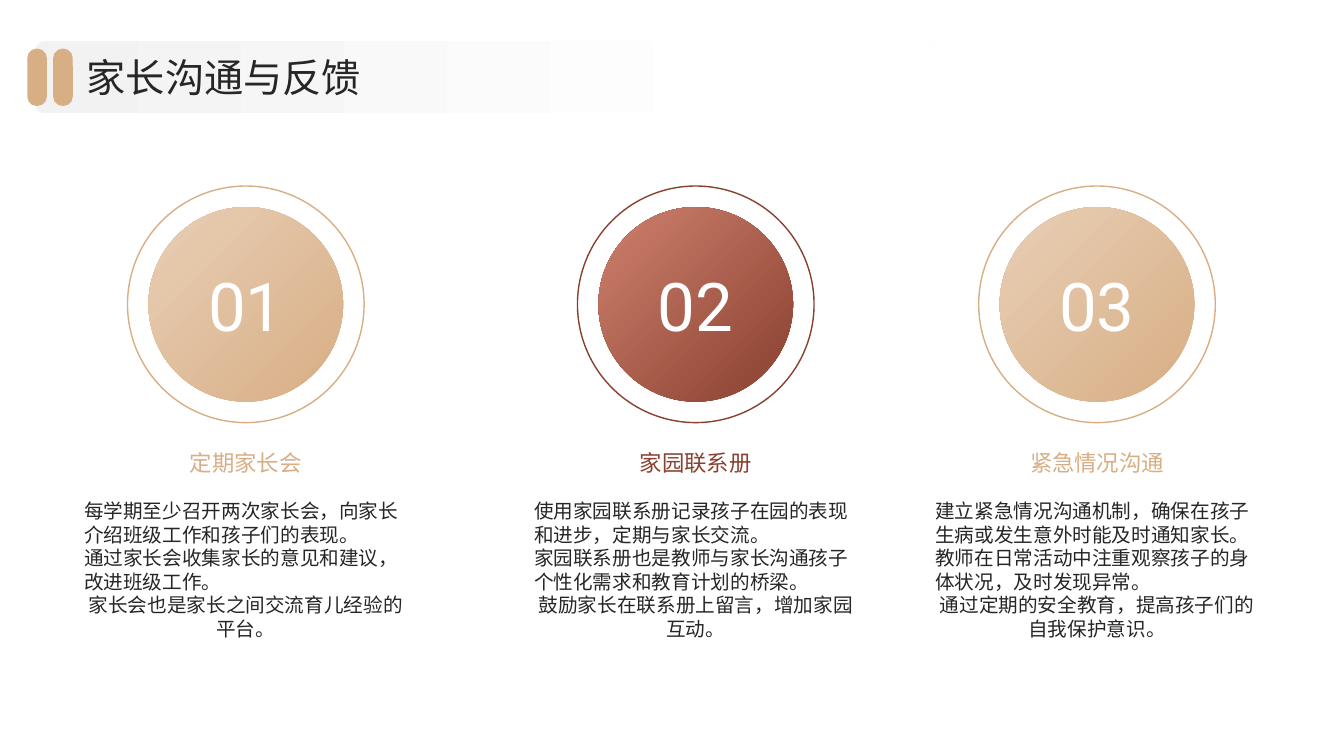
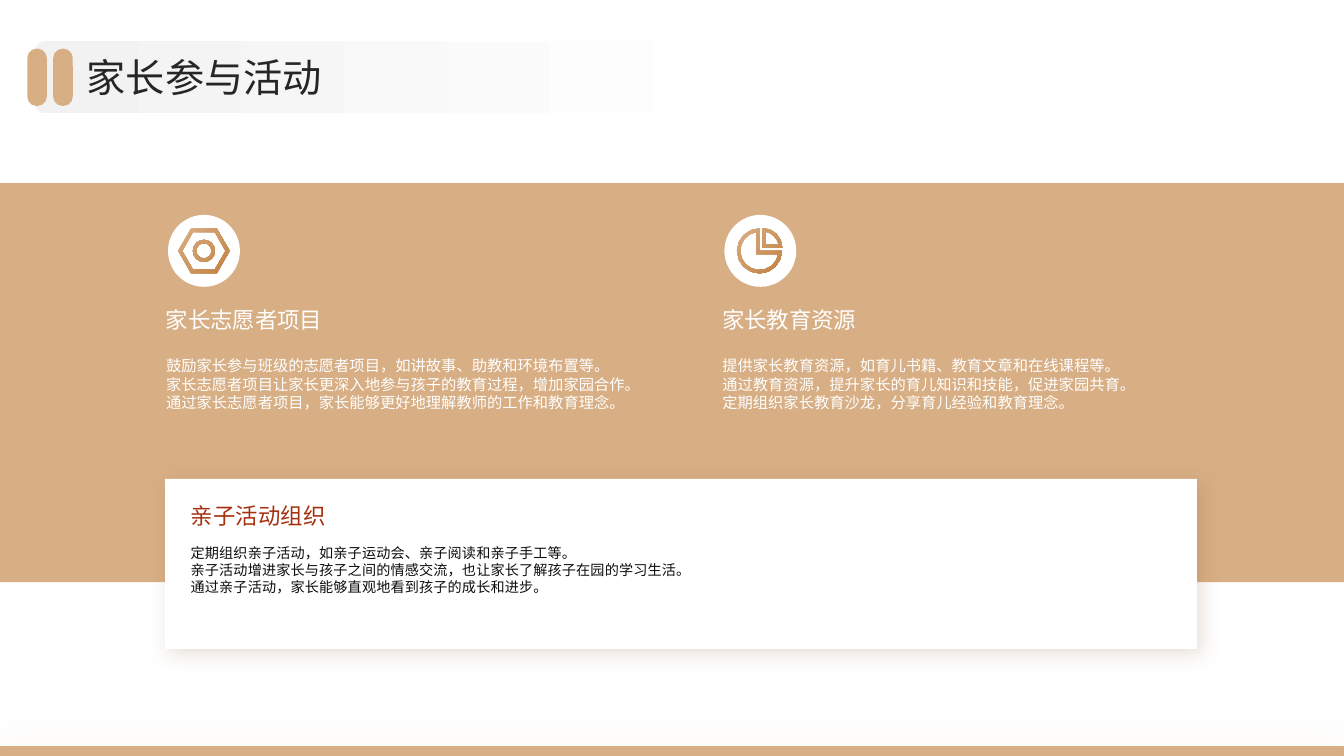
import copy
import math

import pptx
import pptx.dml.color
import pptx.enum.shapes
import pptx.enum.text
import pptx.oxml
import pptx.oxml.ns
import pptx.util

Pt = pptx.util.Pt
SHAPE = pptx.enum.shapes.MSO_SHAPE
ALIGN = pptx.enum.text.PP_ALIGN
ANCHOR = pptx.enum.text.MSO_ANCHOR
qn = pptx.oxml.ns.qn

# Content
MEETING_TITLE = "家长沟通与反馈"
CHANNELS = [
    ("01", "定期家长会", "tan", [
        "每学期至少召开两次家长会，向家长介绍班级工作和孩子们的表现。",
        "通过家长会收集家长的意见和建议，改进班级工作。",
        "家长会也是家长之间交流育儿经验的平台。"]),
    ("02", "家园联系册", "brick", [
        "使用家园联系册记录孩子在园的表现和进步，定期与家长交流。",
        "家园联系册也是教师与家长沟通孩子个性化需求和教育计划的桥梁。",
        "鼓励家长在联系册上留言，增加家园互动。"]),
    ("03", "紧急情况沟通", "tan", [
        "建立紧急情况沟通机制，确保在孩子生病或发生意外时能及时通知家长。",
        "教师在日常活动中注重观察孩子的身体状况，及时发现异常。",
        "通过定期的安全教育，提高孩子们的自我保护意识。"]),
]
ACTIVITY_TITLE = "家长参与活动"
PROGRAMS = [
    ("nut", "家长志愿者项目", [
        "鼓励家长参与班级的志愿者项目，如讲故事、助教和环境布置等。",
        "家长志愿者项目让家长更深入地参与孩子的教育过程，增加家园合作。",
        "通过家长志愿者项目，家长能够更好地理解教师的工作和教育理念。"]),
    ("pie", "家长教育资源", [
        "提供家长教育资源，如育儿书籍、教育文章和在线课程等。",
        "通过教育资源，提升家长的育儿知识和技能，促进家园共育。",
        "定期组织家长教育沙龙，分享育儿经验和教育理念。"]),
]
FAMILY_EVENTS = ("亲子活动组织", [
    "定期组织亲子活动，如亲子运动会、亲子阅读和亲子手工等。",
    "亲子活动增进家长与孩子之间的情感交流，也让家长了解孩子在园的学习生活。",
    "通过亲子活动，家长能够直观地看到孩子的成长和进步。"])

# Shared style: a gradient is (start, end, end position, clockwise angle)
WIDTH, HEIGHT = 960, 540
CJK, LATIN = "Noto Sans CJK SC", "Roboto"
TAN, BRICK, WHITE, INK, BLACK = "D8AE84", "89402F", "FFFFFF", "262626", "0D0D0D"
CHANNEL_COLORS = {
    "tan": (TAN, (TAN, "E8CEB5", 0.98, 225)),
    "brick": (BRICK, (BRICK, "CD7F6D", 0.98, 225)),
}
TITLE_BAND = ("F2F2F2", WHITE, 0.8, 0)
ICON_FILL = (TAN, "C38242", 1, 45)
EVENT_HEADING = ("A5300F", "7C240B", 1, 45)
FLUSH = {"margin_left": 0, "margin_right": 0, "margin_top": 0, "margin_bottom": 0}
PADDED = {"margin_left": Pt(7.2), "margin_right": Pt(7.2),
          "margin_top": Pt(3.6), "margin_bottom": Pt(3.6)}
MIDDLE = {"vertical_anchor": ANCHOR.MIDDLE}


def rgb(value):
    return pptx.dml.color.RGBColor.from_string(value)


def paint(fill, color):
    if color is None:
        fill.background()
    elif isinstance(color, str):
        fill.solid()
        fill.fore_color.rgb = rgb(color)
    else:
        start, end, end_position, angle = color
        fill.gradient()
        fill.gradient_angle = (360 - angle) % 360
        for stop, tone, position in zip(fill.gradient_stops, (start, end), (0, end_position)):
            stop.color.rgb = rgb(tone)
            stop.position = position


def finish(shape, fill=None, line=None):
    paint(shape.fill, fill)
    paint(shape.line.fill, line)
    if line:
        shape.line.width = Pt(1)
    shape.shadow.inherit = False
    return shape


def draw(slide, preset, box, fill=None, line=None, corner=None):
    shape = slide.shapes.add_shape(preset, *map(Pt, box))
    if corner is not None:
        shape.adjustments[0] = corner
    return finish(shape, fill, line)


def cast_shadow(shape, color, alpha, blur, distance, angle):
    effects = shape._element.spPr.find(qn("a:effectLst"))
    effects.append(pptx.oxml.parse_xml(
        '<a:outerShdw xmlns:a="http://schemas.openxmlformats.org/drawingml/2006/main" '
        f'blurRad="{Pt(blur)}" dist="{Pt(distance)}" dir="{angle * 60000}" '
        f'algn="ctr" rotWithShape="0"><a:srgbClr val="{color}">'
        f'<a:alpha val="{alpha * 1000}"/></a:srgbClr></a:outerShdw>'))


def write(holder, lines, size, color, aligns=(ALIGN.LEFT,), font=CJK, tracking=0, **layout):
    frame = holder.text_frame
    settings = {"word_wrap": True, "auto_size": pptx.enum.text.MSO_AUTO_SIZE.NONE,
                "vertical_anchor": ANCHOR.TOP, **FLUSH, **layout}
    for key, value in settings.items():
        setattr(frame, key, value)
    for number, line in enumerate(lines):
        paragraph = frame.paragraphs[0] if number == 0 else frame.add_paragraph()
        paragraph_format = {"alignment": aligns[min(number, len(aligns) - 1)],
                            "line_spacing": Pt(round(size * 1.2, 1)),
                            "space_before": Pt(0), "space_after": Pt(0)}
        for key, value in paragraph_format.items():
            setattr(paragraph, key, value)
        properties = paragraph._p.get_or_add_pPr()
        properties.set("marL", "0")
        properties.set("indent", "0")
        properties.append(properties.makeelement(qn("a:buNone"), {}))
        run = paragraph.add_run()
        run.text = line
        for key, value in {"size": Pt(size), "name": font, "bold": False}.items():
            setattr(run.font, key, value)
        paint(run.font.fill, color)
        run_properties = run._r.get_or_add_rPr()
        run_properties.append(run_properties.makeelement(qn("a:ea"), {"typeface": font}))
        if tracking:
            run_properties.set("spc", str(tracking))


def add_text(slide, box, text, size, color, **options):
    write(slide.shapes.add_textbox(*map(Pt, box)), [text], size, color, **options)


def fill_placeholder(slide, idx, box, lines, size, color, **options):
    holder = next(p for p in slide.placeholders if p.placeholder_format.idx == idx)
    slide.shapes._spTree.append(holder._element)  # bring to front
    for key, value in zip(("left", "top", "width", "height"), box):
        setattr(holder, key, Pt(value))
    write(holder, lines, size, color, **options)


def three_body_layout(deck):
    layout = deck.slide_layouts.get_by_name("Two Content")
    second = layout.placeholders.get(idx=2)._element
    third = copy.deepcopy(second)
    third.ph.idx = 3
    third.nvSpPr.cNvPr.id = 20
    second.addnext(third)
    return layout


def add_header(slide, title):
    draw(slide, SHAPE.ROUNDED_RECTANGLE, (25, 29.4, 644, 51.6), TITLE_BAND, corner=0.14)
    fill_placeholder(slide, 0, (62, 36.4, 840, 36.8), [title], 28, INK, **MIDDLE)
    for left in (19.5, 38):
        draw(slide, SHAPE.ROUNDED_RECTANGLE, (left, 34.75, 14, 41), TAN, corner=0.48)


# Icon outlines, around the icon centre
def arc(radius, start, end, center=(0, 0), step=22.5):
    count = math.ceil(abs(end - start) / step)
    angles = [math.radians(start + (end - start) * i / count) for i in range(count + 1)]
    return [(center[0] + radius * math.cos(a), center[1] + radius * math.sin(a))
            for a in angles]


def ring_edge(radius, step=22.5):
    return arc(radius, 0, 360, step=step)[:-1]


def icon_outlines(kind):
    if kind == "nut":
        return [ring_edge(18.4, 60), ring_edge(15.5, 60), ring_edge(7.9), ring_edge(5.4)]
    slice_tip = (1.6, -2.2)
    return [arc(16.1, 0, 270, (-0.6, 0)) + [(-0.6, 0)],
            arc(13.7, 260, 10, (-0.6, 0)) + [(-2.9, 2.3)],
            arc(14.1, 270, 360, slice_tip) + [slice_tip],
            arc(11.7, 349, 281, slice_tip) + [(3.8, -4.4)]]


def draw_icon(slide, kind, center_x, center_y):
    builder = None
    for outline in icon_outlines(kind):
        points = [(Pt(center_x + x), Pt(center_y + y)) for x, y in outline]
        if builder is None:
            builder = slide.shapes.build_freeform(*points[0])
        else:
            builder.move_to(*points[0])
        builder.add_line_segments(points[1:], close=True)
    finish(builder.convert_to_shape(), ICON_FILL)


# Slides
def build_channels(slide):
    circle_y, column_width = 217.4, 245.5
    centers = (175.6, 497, 783.6)
    for idx, (center, channel) in enumerate(zip(centers, CHANNELS), 1):
        number, heading, tone, lines = channel
        color, gradient = CHANNEL_COLORS[tone]
        left = center - column_width / 2
        disc, ring = [(center - d / 2, circle_y - d / 2, d, d) for d in (139, 169)]
        fill_placeholder(slide, idx, (left, 352.8, column_width, 138), lines, 14, INK,
                         aligns=(ALIGN.LEFT, ALIGN.LEFT, ALIGN.CENTER), **PADDED)
        badge = draw(slide, SHAPE.FLOWCHART_CONNECTOR, disc, gradient)
        write(badge, [number], 48, WHITE, aligns=(ALIGN.CENTER,), font=LATIN, **MIDDLE)
        draw(slide, SHAPE.FLOWCHART_CONNECTOR, ring, line=color)
        add_text(slide, (left, 307, column_width, 46.8), heading, 16, color,
                 aligns=(ALIGN.CENTER,), **PADDED, **MIDDLE)
    add_header(slide, MEETING_TITLE)


def build_activities(slide):
    footer = draw(slide, SHAPE.RECTANGLE, (0, HEIGHT - 7, WIDTH, 7), TAN)
    cast_shadow(footer, TAN, 20, 25, 0, 0)
    draw(slide, SHAPE.RECTANGLE, (0, 130.8, WIDTH, 285), TAN)

    # Family events card
    card = draw(slide, SHAPE.RECTANGLE, (118, 342, 737, 121.6), WHITE)
    cast_shadow(card, "84572A", 19, 14, 3, 45)
    heading, lines = FAMILY_EVENTS
    add_text(slide, (136.2, 358.5, 700, 21.6), heading, 16, EVENT_HEADING, tracking=15)
    fill_placeholder(slide, 3, (136.2, 388.8, 700, 57), lines, 10.1, BLACK, tracking=15)

    # Programme columns
    first_left, pitch, width, disc_size = 118.6, 397.4, 338.4, 51.4
    for idx, (icon, heading, lines) in enumerate(PROGRAMS, 1):
        left = first_left + (idx - 1) * pitch
        fill_placeholder(slide, idx, (left, 254.6, width, 77), lines, 10.9, WHITE)
        add_text(slide, (left - 7.2, 215.3, width, 36), heading, 16, WHITE, **PADDED)
        draw(slide, SHAPE.OVAL, (left + 1.4, 153.5, disc_size, disc_size), WHITE)
        draw_icon(slide, icon, left + 1.4 + disc_size / 2, 153.5 + disc_size / 2)
    add_header(slide, ACTIVITY_TITLE)


def main():
    deck = pptx.Presentation()
    deck.slide_width, deck.slide_height = Pt(WIDTH), Pt(HEIGHT)
    layout = three_body_layout(deck)
    for build in (build_channels, build_activities):
        build(deck.slides.add_slide(layout))
    deck.save("out.pptx")


if __name__ == "__main__":
    main()
